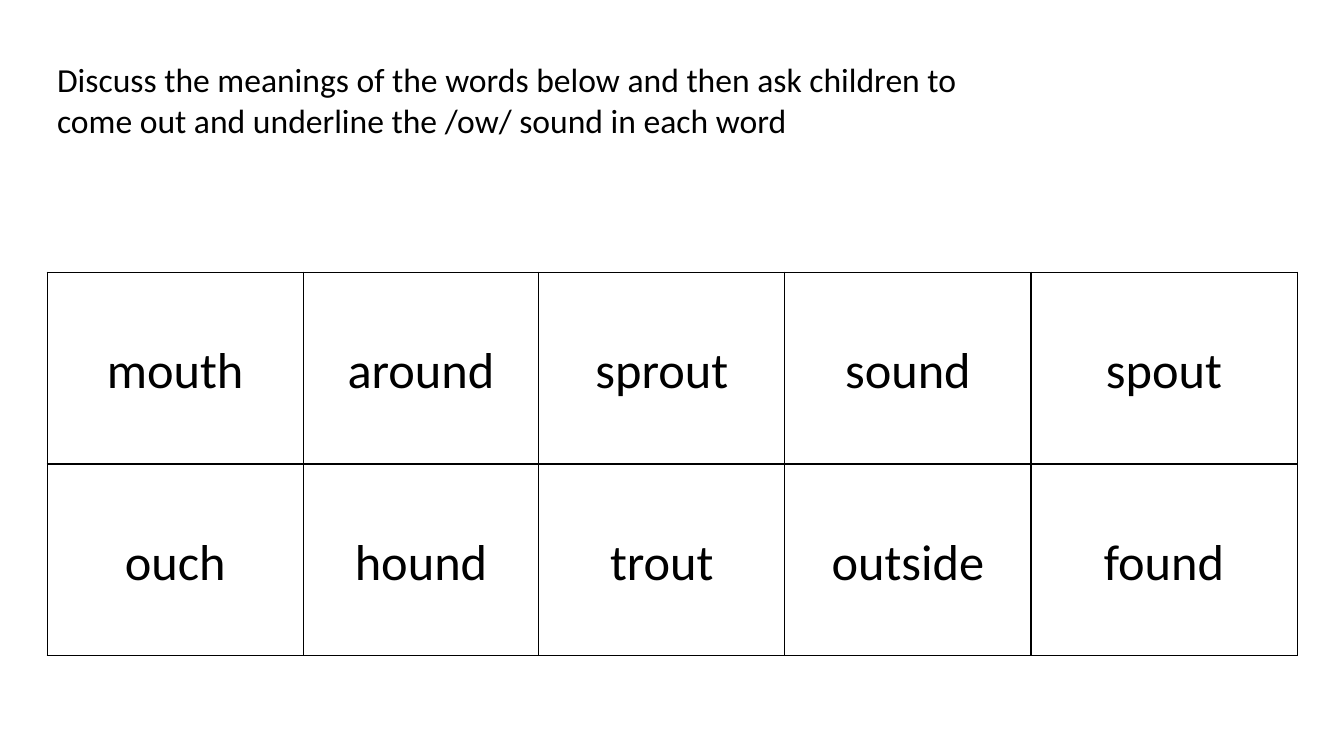
from dataclasses import dataclass

from lxml import etree
from pptx import Presentation
from pptx.dml.color import RGBColor
from pptx.enum.text import MSO_ANCHOR, PP_ALIGN
from pptx.oxml.ns import qn
from pptx.slide import Slide
from pptx.table import _Cell
from pptx.text.text import _Paragraph
from pptx.util import Cm, Pt

CENTER = PP_ALIGN.CENTER
MIDDLE = MSO_ANCHOR.MIDDLE
BLACK = RGBColor(0x00, 0x00, 0x00)
WHITE = RGBColor(0xFF, 0xFF, 0xFF)
FONT = "Calibri"
BORDER_SIDES = ("a:lnL", "a:lnR", "a:lnT", "a:lnB")
LEFT = 1.19
ROW_HEIGHT = 4.83

INSTRUCTION = (
    "Discuss the meanings of the words below and then ask children to "
    "come out and underline the /ow/ sound in each word"
)


@dataclass(frozen=True)
class WordColumn:
    width: float
    words: tuple[str, ...]


WORD_COLUMNS = (
    WordColumn(6.45, ("mouth", "ouch")),
    WordColumn(5.94, ("around", "hound")),
    WordColumn(6.2, ("sprout", "trout")),
    WordColumn(6.2, ("sound", "outside")),
    WordColumn(6.71, ("spout", "found")),
)


def style_text(para: _Paragraph, size: float) -> None:
    for span in para.runs:
        span.font.name = FONT
        span.font.size = Pt(size)
        span.font.bold = False
        span.font.color.rgb = BLACK


def add_borders(cell: _Cell) -> None:
    properties = cell._tc.get_or_add_tcPr()
    for side in BORDER_SIDES:
        line = etree.SubElement(properties, qn(side), w=str(Pt(1)))
        fill = etree.SubElement(line, qn("a:solidFill"))
        etree.SubElement(fill, qn("a:srgbClr"), val=str(BLACK))


def fill_word_cell(cell: _Cell, word: str) -> None:
    add_borders(cell)
    cell.fill.solid()
    cell.fill.fore_color.rgb = WHITE
    cell.vertical_anchor = MIDDLE
    cell.margin_top = Cm(0.3)
    cell.text = word
    para = cell.text_frame.paragraphs[0]
    para.alignment = CENTER
    style_text(para, 36)


def add_instruction(page: Slide) -> None:
    box = page.shapes.add_textbox(Cm(LEFT), Cm(1.37), Cm(23.83), Cm(3.33))
    box.text_frame.word_wrap = True
    box.text_frame.text = INSTRUCTION
    style_text(box.text_frame.paragraphs[0], 24)


def add_word_table(page: Slide) -> None:
    row_count = len(WORD_COLUMNS[0].words)
    total_width = sum(column.width for column in WORD_COLUMNS)
    table = page.shapes.add_table(
        row_count, len(WORD_COLUMNS),
        Cm(LEFT), Cm(6.86), Cm(total_width), Cm(row_count * ROW_HEIGHT),
    ).table
    table.first_row = False
    table.horz_banding = False
    for row in table.rows:
        row.height = Cm(ROW_HEIGHT)
    for column_index, column in enumerate(WORD_COLUMNS):
        table.columns[column_index].width = Cm(column.width)
        for row_index, word in enumerate(column.words):
            fill_word_cell(table.cell(row_index, column_index), word)


def main() -> None:
    deck = Presentation()
    deck.slide_width = Cm(33.87)
    deck.slide_height = Cm(19.05)
    page = deck.slides.add_slide(deck.slide_layouts[6])
    add_instruction(page)
    add_word_table(page)
    deck.save("out.pptx")


if __name__ == "__main__":
    main()
